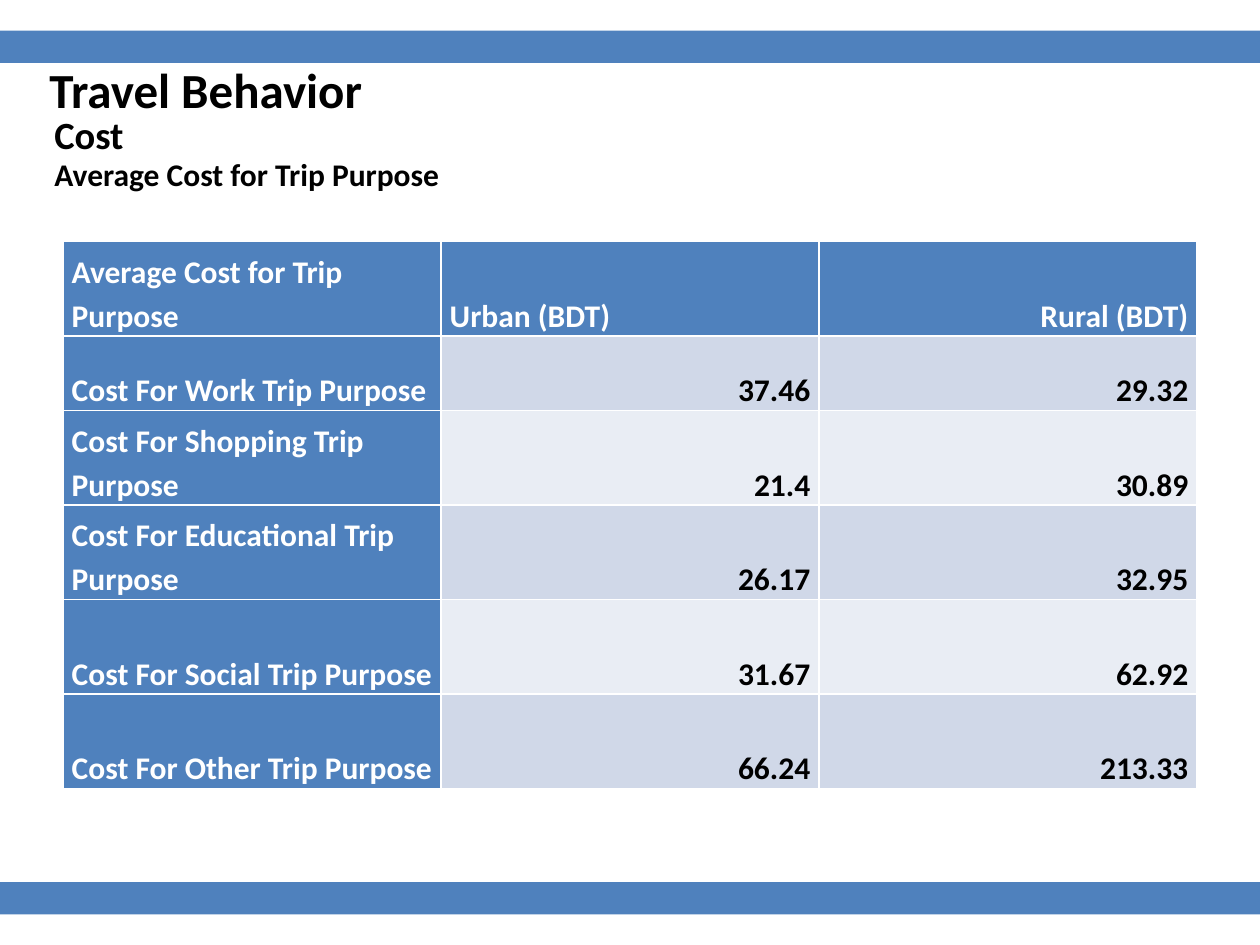
from lxml import etree
from pptx import Presentation
from pptx.dml.color import RGBColor
from pptx.enum import shapes, text
from pptx.oxml import ns
from pptx.util import Pt

COLORS = {
    "blue": "4F81BD",
    "odd_row": "D0D8E8",
    "even_row": "E9EDF4",
    "black": "000000",
    "white": "FFFFFF",
}
FONT = "Calibri"
ROWS = [
    ("Average Cost for Trip Purpose", "Urban (BDT)", "Rural (BDT)"),
    ("Cost For Work Trip Purpose", "37.46", "29.32"),
    ("Cost For Shopping Trip Purpose", "21.4", "30.89"),
    ("Cost For Educational Trip Purpose", "26.17", "32.95"),
    ("Cost For Social Trip Purpose", "31.67", "62.92"),
    ("Cost For Other Trip Purpose", "66.24", "213.33"),
]
ROW_HEIGHTS = [54, 42.5, 54, 54, 54, 54]


def rgb(name):
    return RGBColor.from_string(COLORS[name])


def set_attributes(target, values):
    for name, value in values.items():
        setattr(target, name, value)


def place(shape, box):
    names = ("left", "top", "width", "height")
    set_attributes(shape, {name: Pt(value) for name, value in zip(names, box)})


def write(frame, wording, size, color="black", align="LEFT", spacing=1.0):
    """Put one bold paragraph into a text frame."""
    frame.text = wording
    paragraph = frame.paragraphs[0]
    set_attributes(paragraph, {
        "alignment": getattr(text.PP_ALIGN, align), "line_spacing": spacing})
    font = paragraph.runs[0].font
    set_attributes(font, {"name": FONT, "size": Pt(size), "bold": True})
    font.color.rgb = rgb(color)


def add_band(slide, box):
    band = slide.shapes.add_shape(
        shapes.MSO_SHAPE.RECTANGLE, *[Pt(value) for value in box])
    band.shadow.inherit = False
    band.fill.solid()
    band.fill.fore_color.rgb = rgb("blue")
    band.line.fill.background()


def add_headings(slide, box):
    """Title with two subheadings below it."""
    left, top, width, height = box
    title = slide.shapes.title
    place(title, box)
    write(title.text_frame, "Travel Behavior", 28)
    set_attributes(title.text_frame, {
        "vertical_anchor": text.MSO_ANCHOR.TOP,
        "auto_size": text.MSO_AUTO_SIZE.NONE, "word_wrap": False})

    subheadings = [("Cost", 22, 29.5, 274, 34),
                   ("Average Cost for Trip Purpose", 18, 55, 236, 29)]
    for wording, size, offset, box_width, box_height in subheadings:
        subheading = slide.shapes.add_textbox(
            Pt(left + 3), Pt(top + offset), Pt(box_width), Pt(box_height))
        write(subheading.text_frame, wording, size)
        subheading.text_frame.word_wrap = size > 18


def add_borders(cell):
    properties = cell._tc.get_or_add_tcPr()
    for index, side in enumerate(("a:lnL", "a:lnR", "a:lnT", "a:lnB")):
        line = etree.Element(ns.qn(side), w=str(Pt(1)))
        fill = etree.SubElement(line, ns.qn("a:solidFill"))
        etree.SubElement(fill, ns.qn("a:srgbClr"), val=COLORS["white"])
        properties.insert(index, line)


def add_cost_table(slide, box):
    frame = slide.shapes.add_table(
        len(ROWS), len(ROWS[0]), *[Pt(value) for value in box])
    table = frame.table
    table.first_col = True
    for column in table.columns:
        column.width = Pt(box[2] / len(ROWS[0]))
    for row, height in zip(table.rows, ROW_HEIGHTS):
        row.height = Pt(height)

    cell_format = {
        "margin_left": Pt(5), "margin_right": Pt(5),
        "margin_top": 0, "margin_bottom": 0,
        "vertical_anchor": text.MSO_ANCHOR.BOTTOM,
    }
    for row, values in enumerate(ROWS):
        for column, wording in enumerate(values):
            cell = table.cell(row, column)
            heading = row == 0 or column == 0
            right = column == 2 or not heading
            write(cell.text_frame, wording, 18,
                  "white" if heading else "black",
                  "RIGHT" if right else "LEFT", 1.15)
            set_attributes(cell, cell_format)
            band = "odd_row" if row % 2 else "even_row"
            cell.fill.solid()
            cell.fill.fore_color.rgb = rgb("blue" if heading else band)
            add_borders(cell)


def main():
    presentation = Presentation()
    set_attributes(presentation, {
        "slide_width": Pt(720), "slide_height": Pt(540)})
    slide = presentation.slides.add_slide(presentation.slide_layouts[5])
    for top in (17.5, 504):
        add_band(slide, (0, top, 720, 18.5))
    add_headings(slide, (21, 30.25, 195, 63.5))
    add_cost_table(slide, (36, 138, 648, sum(ROW_HEIGHTS)))
    presentation.save("out.pptx")


if __name__ == "__main__":
    main()
